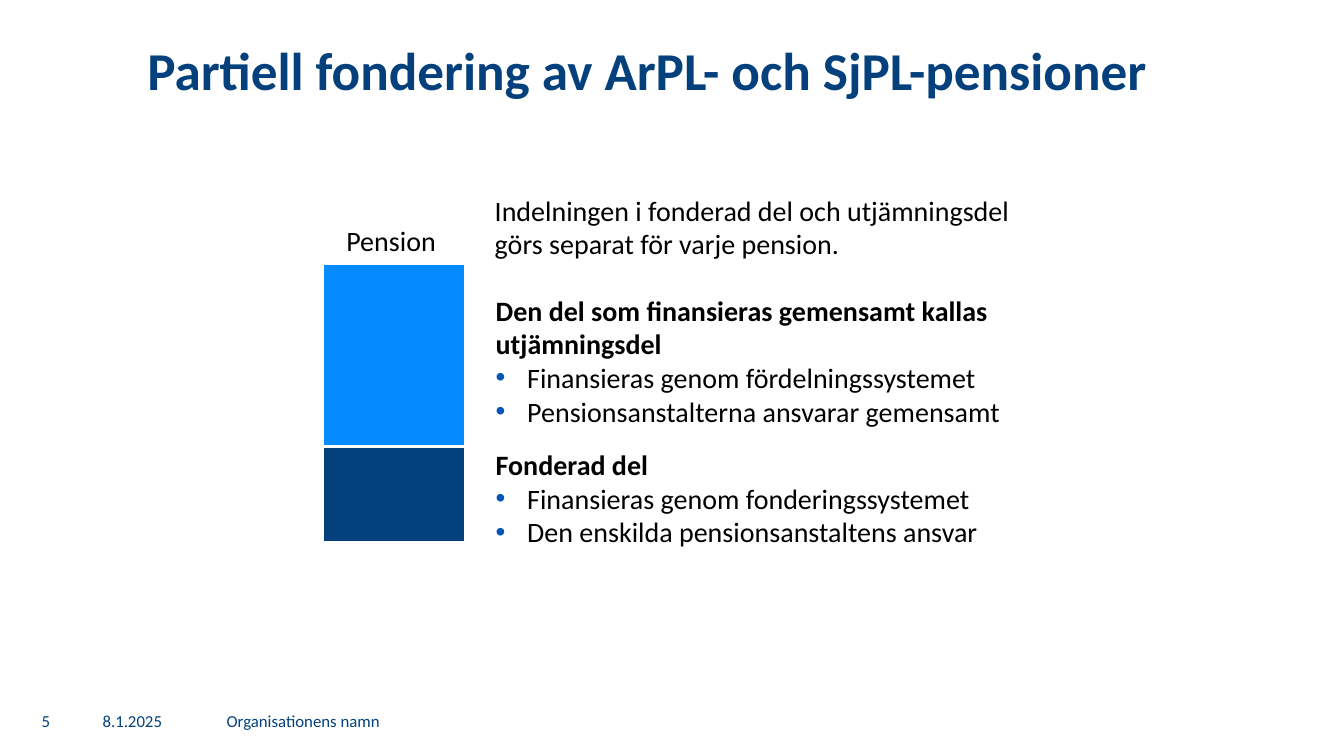
from lxml import etree
from pptx import Presentation
from pptx.dml.color import RGBColor
from pptx.enum.shapes import MSO_SHAPE
from pptx.enum.text import MSO_ANCHOR, PP_ALIGN
from pptx.oxml.ns import qn
from pptx.util import Pt

RECTANGLE = MSO_SHAPE.RECTANGLE
TOP, MIDDLE = MSO_ANCHOR.TOP, MSO_ANCHOR.MIDDLE
LEFT, CENTER = PP_ALIGN.LEFT, PP_ALIGN.CENTER

NAVY = RGBColor(0x03, 0x40, 0x7C)
BRIGHT_BLUE = RGBColor(0x05, 0x8A, 0xFF)
BULLET_BLUE = RGBColor(0x03, 0x56, 0xB5)
BLACK = RGBColor(0, 0, 0)
WHITE = RGBColor(0xFF, 0xFF, 0xFF)

BLANK_LAYOUT = 6
BULLET_INDENT = Pt(22.5)


class PensionSlide:
    font_name = "Calibri"
    body_size = 20
    footer_size = 12

    def __init__(self, presentation):
        layout = presentation.slide_layouts[BLANK_LAYOUT]
        self.shapes = presentation.slides.add_slide(layout).shapes

    def style(self, paragraph, size, color, bold=False):
        for run in paragraph.runs:
            run.font.name = self.font_name
            run.font.size = Pt(size)
            run.font.color.rgb = color
            run.font.bold = bold

    def text(self, wording, left, top, width, height, size=body_size,
             color=BLACK, bold=False, align=LEFT, anchor=TOP):
        box = self.shapes.add_textbox(Pt(left), Pt(top), Pt(width), Pt(height))
        frame = box.text_frame
        frame.word_wrap = True
        frame.vertical_anchor = anchor
        frame.text = wording
        frame.paragraphs[0].alignment = align
        self.style(frame.paragraphs[0], size, color, bold)
        return frame

    def footer(self, wording, left, width, align=LEFT):
        self.text(wording, left, 500.4, width, 28.8, self.footer_size, NAVY,
                  align=align, anchor=MIDDLE)

    def bullet(self, paragraph):
        properties = paragraph._p.get_or_add_pPr()
        properties.set("marL", str(BULLET_INDENT))
        properties.set("indent", str(-BULLET_INDENT))
        color = etree.SubElement(properties, qn("a:buClr"))
        etree.SubElement(color, qn("a:srgbClr"), val=str(BULLET_BLUE))
        etree.SubElement(properties, qn("a:buFont"), typeface="Arial")
        etree.SubElement(properties, qn("a:buChar"), char="•")

    def explanation(self, heading, points, top, height):
        """Add a bold heading followed by bulleted points."""
        frame = self.text(heading, 347, top, 419.8, height, bold=True)
        for point in points:
            paragraph = frame.add_paragraph()
            paragraph.text = point
            self.bullet(paragraph)
            self.style(paragraph, self.body_size, BLACK)

    def pension_part(self, top, height, color):
        part = self.shapes.add_shape(RECTANGLE, Pt(230.4), Pt(top),
                                     Pt(102.2), Pt(height))
        part.shadow.inherit = False
        part.fill.solid()
        part.fill.fore_color.rgb = color
        part.line.color.rgb = WHITE
        part.line.width = Pt(2)


def main():
    presentation = Presentation()
    presentation.slide_width = Pt(960)
    presentation.slide_height = Pt(540)
    slide = PensionSlide(presentation)

    slide.footer("8.1.2025", 66.2, 81.4)
    slide.footer("Organisationens namn", 154.8, 738.7)
    slide.footer("5", 14.4, 36.7, CENTER)

    title = slide.text("Partiell fondering av ArPL- och SjPL-pensioner",
                       0, 28.1, 925, 105.1, 38, NAVY, True, CENTER)
    title.paragraphs[0].line_spacing = 0.9

    slide.text("Pension", 234, 156.2, 90.7, 31.7, align=CENTER)
    slide.text("Indelningen i fonderad del och utjämningsdel görs separat "
               "för varje pension.", 346.3, 134.6, 402.5, 55.4)
    slide.explanation("Den del som finansieras gemensamt kallas utjämningsdel",
                      ["Finansieras genom fördelningssystemet",
                       "Pensionsanstalterna ansvarar gemensamt"], 205.9, 104.4)
    slide.explanation("Fonderad del",
                      ["Finansieras genom fonderingssystemet",
                       "Den enskilda pensionsanstaltens ansvar"], 316.1, 79.9)

    slide.pension_part(188.6, 131, BRIGHT_BLUE)
    slide.pension_part(319, 68.4, NAVY)

    presentation.save("out.pptx")


if __name__ == "__main__":
    main()
